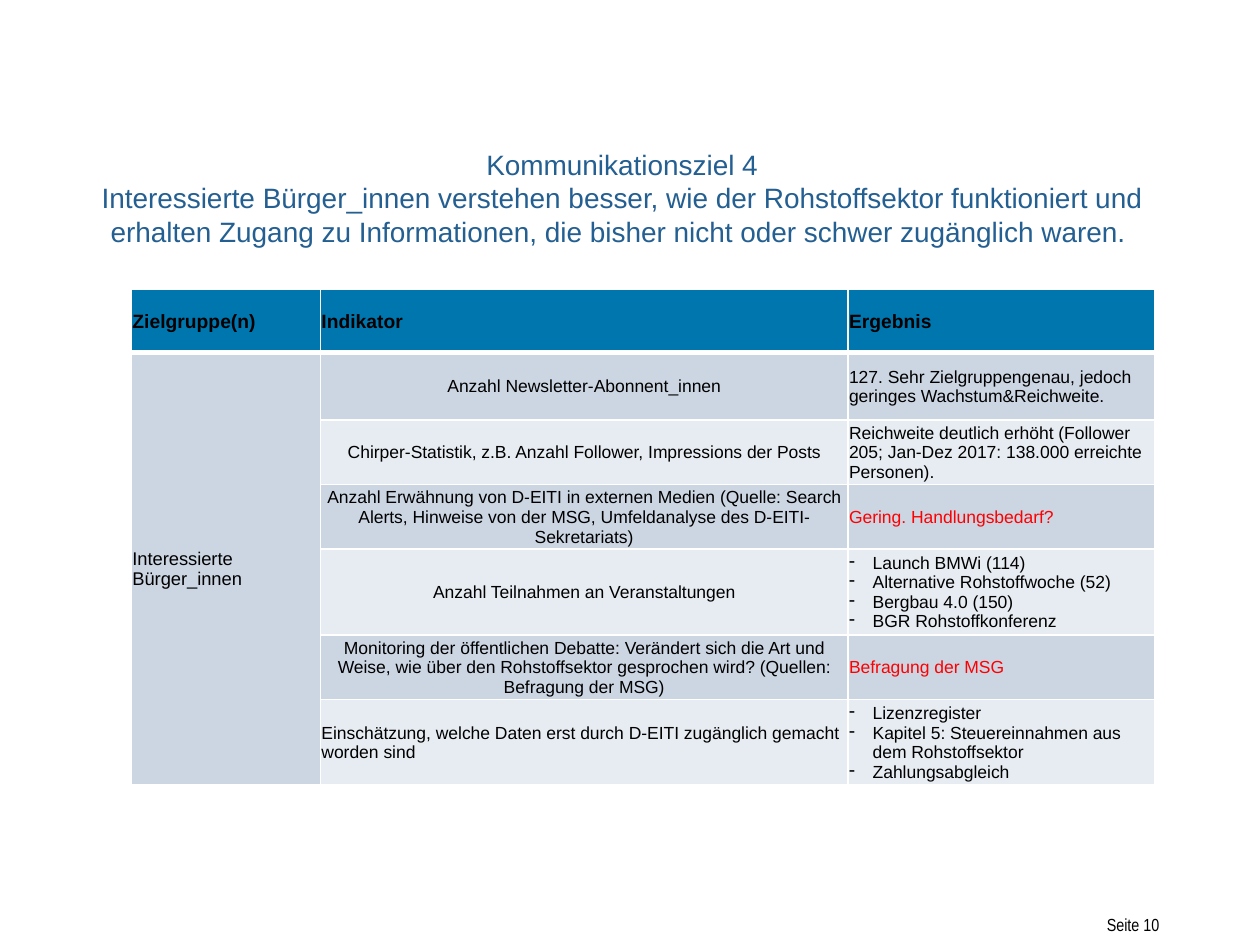
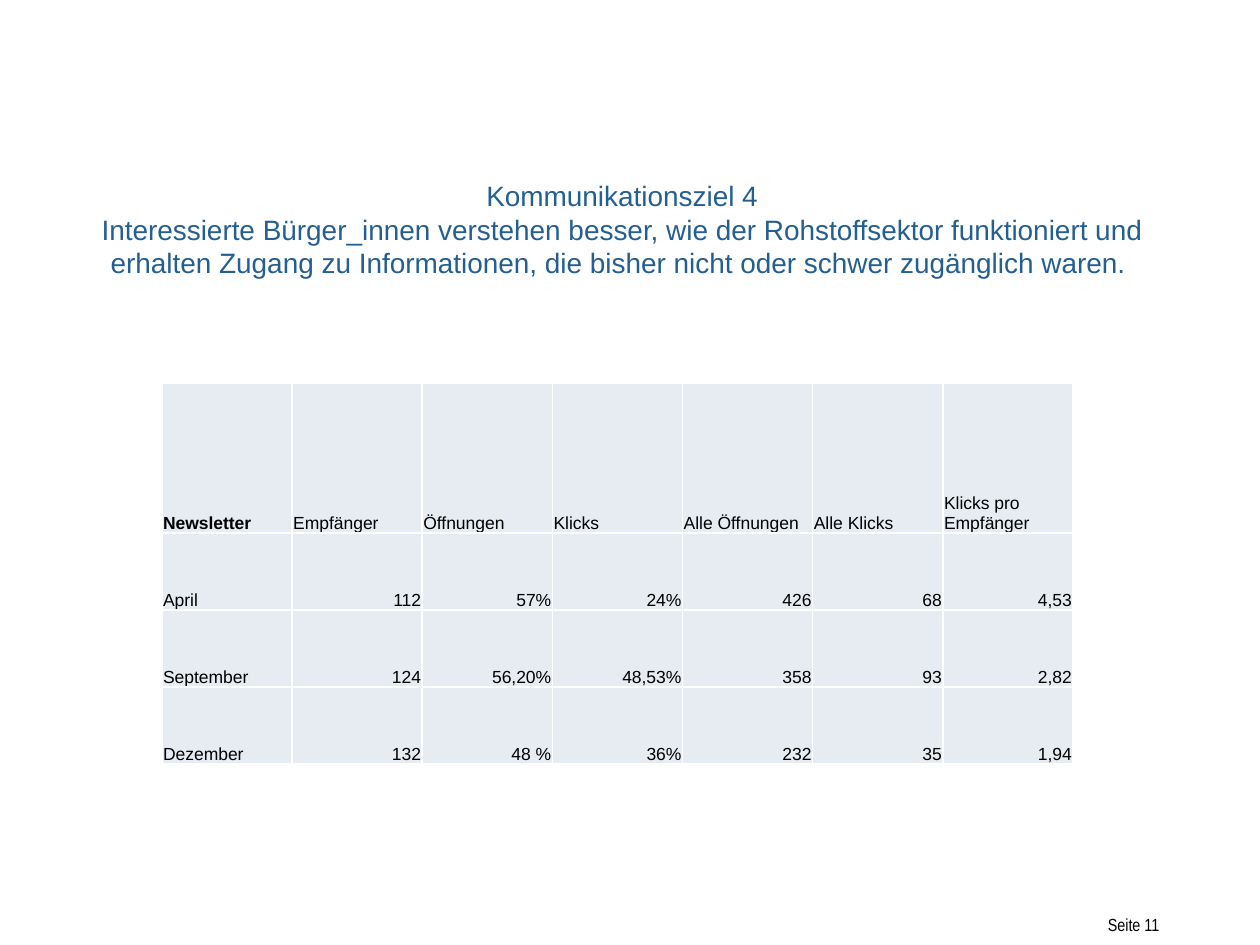
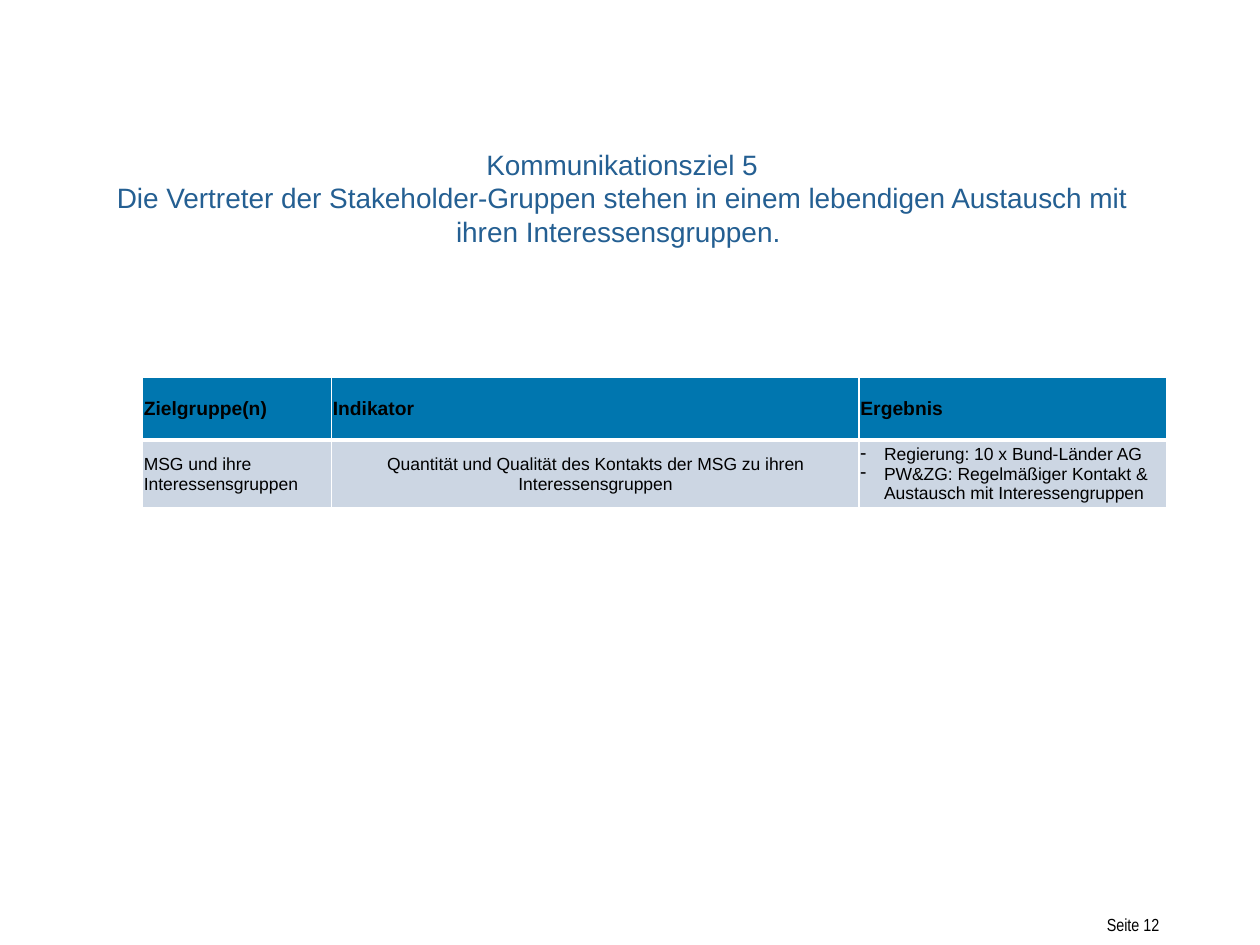
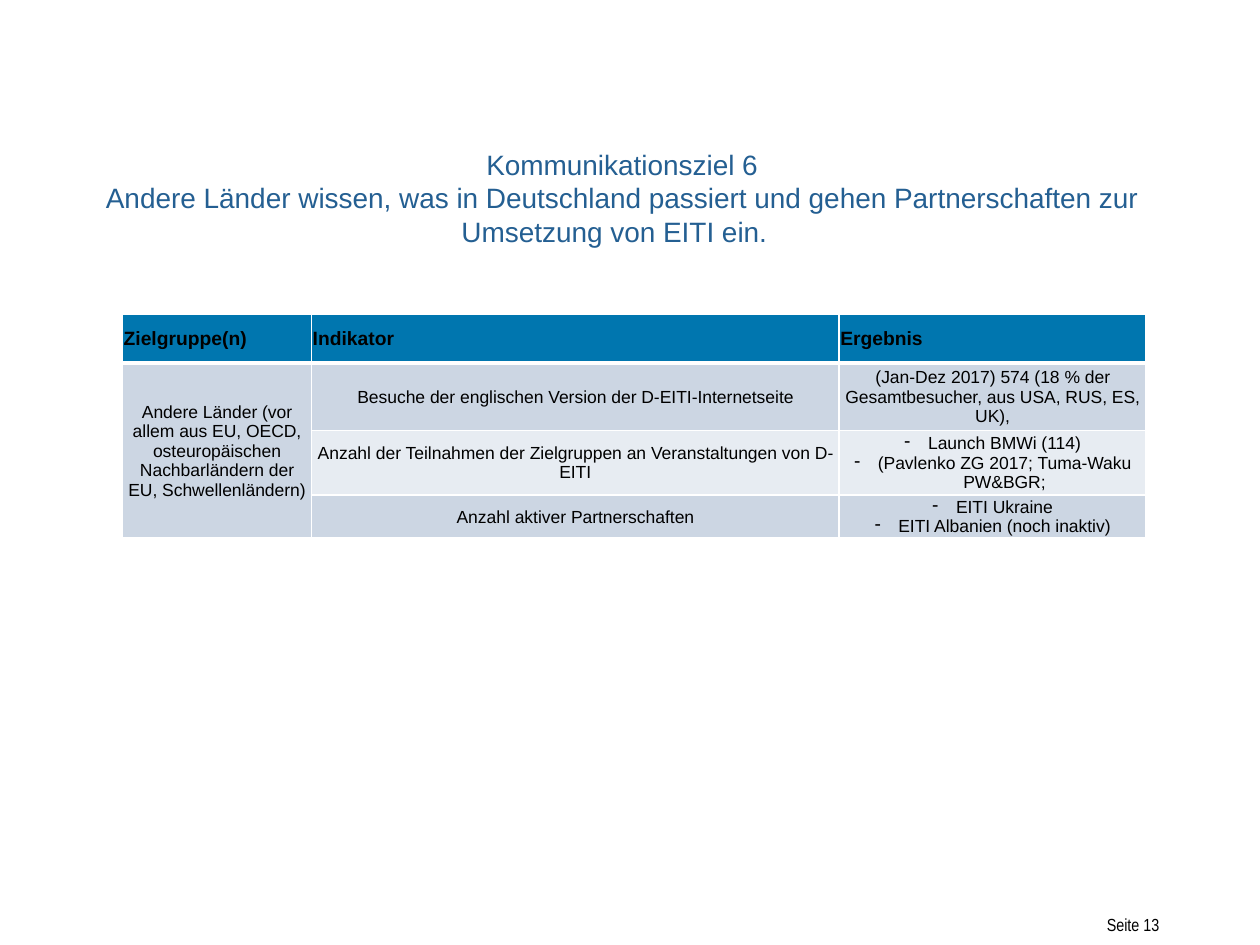
"""Build four slides on communication goals, each with a title, a table and a page number."""
import pptx
import pptx.dml.color
import pptx.enum.shapes
import pptx.enum.text
import pptx.oxml
import pptx.oxml.ns
import pptx.util

Pt = pptx.util.Pt
ALIGN = pptx.enum.text.PP_ALIGN
ANCHOR = pptx.enum.text.MSO_ANCHOR
COLORS = {
    "title": "245F92",
    "text": "000000",
    "alert": "FF0000",
    "header": "0076AF",
    "dark_band": "CCD6E3",
    "light_band": "E7ECF2",
    "white": "FFFFFF",
}
NAMESPACE = pptx.oxml.ns.nsdecls("a")


def write_text(frame, text, size=10, color="text", font="Arial", bold=False,
               align=ALIGN.LEFT, line_spacing=None):
    """Write a string as one paragraph, or a list as dashed paragraphs."""
    frame.word_wrap = True
    bulleted = isinstance(text, list)
    for index, line in enumerate(text if bulleted else [text]):
        paragraph = frame.paragraphs[0] if index == 0 else frame.add_paragraph()
        paragraph.text = line
        paragraph.alignment = align
        paragraph.line_spacing = line_spacing
        if bulleted:
            properties = paragraph._p.get_or_add_pPr()
            properties.set("marL", str(Pt(13.5)))
            properties.set("indent", str(-Pt(13.5)))
            properties.append(pptx.oxml.parse_xml(f'<a:buChar {NAMESPACE} char="-"/>'))
        for run in paragraph.runs:
            run.font.size = Pt(size)
            run.font.name = font
            run.font.bold = bold
            run.font.color.rgb = pptx.dml.color.RGBColor.from_string(COLORS[color])


def style_cell(cell, fill, anchor, bottom_width=1):
    """Give a cell its margins, white borders and fill."""
    cell.margin_left = cell.margin_right = cell.margin_top = Pt(0.7)
    cell.margin_bottom = 0
    cell.vertical_anchor = anchor
    properties = cell._tc.get_or_add_tcPr()
    for side, width in (("L", 1), ("R", 1), ("T", 1), ("B", bottom_width)):
        properties.append(pptx.oxml.parse_xml(
            f'<a:ln{side} {NAMESPACE} w="{Pt(width)}"><a:solidFill>'
            f'<a:srgbClr val="{COLORS["white"]}"/></a:solidFill></a:ln{side}>'))
    cell.fill.solid()
    cell.fill.fore_color.rgb = pptx.dml.color.RGBColor.from_string(COLORS[fill])


GOAL_4 = ("Kommunikationsziel 4\nInteressierte Bürger_innen verstehen besser, wie der "
          "Rohstoffsektor funktioniert und erhalten Zugang zu Informationen, die bisher "
          "nicht oder schwer zugänglich waren. ")
GOAL_HEADER = ["Zielgruppe(n)", "Indikator", "Ergebnis"]
GOAL_COLUMNS = [108, 301.5, 175.5]
LAST_INDICATOR = "Einschätzung, welche Daten erst durch D-EITI zugänglich gemacht worden sind"
ALERTS = ["Gering. Handlungsbedarf?", "Befragung der MSG"]

SLIDES = [
    {
        "title": GOAL_4, "title_top": 80.5, "left": 75, "top": 165.5,
        "columns": GOAL_COLUMNS, "heights": [36, 38.5, 37, 36.5, 49, 37, 48.5],
        "aligns": [ALIGN.LEFT, ALIGN.CENTER, ALIGN.LEFT], "group_size": 10.5,
        "rows": [
            GOAL_HEADER,
            ["Interessierte Bürger_innen", "Anzahl Newsletter-Abonnent_innen",
             "127. Sehr Zielgruppengenau, jedoch geringes Wachstum&Reichweite."],
            ["", "Chirper-Statistik, z.B. Anzahl Follower, Impressions der Posts",
             "Reichweite deutlich erhöht (Follower 205; Jan-Dez 2017: 138.000 erreichte Personen)."],
            ["", "Anzahl Erwähnung von D-EITI in externen Medien (Quelle: Search Alerts, "
             "Hinweise von der MSG, Umfeldanalyse des D-EITI-Sekretariats)", ALERTS[0]],
            ["", "Anzahl Teilnahmen an Veranstaltungen",
             ["Launch BMWi (114)", "Alternative Rohstoffwoche (52)", "Bergbau 4.0 (150)",
              "BGR Rohstoffkonferenz"]],
            ["", "Monitoring der öffentlichen Debatte: Verändert sich die Art und Weise, wie über "
             "den Rohstoffsektor gesprochen wird? (Quellen: Befragung der MSG)", ALERTS[1]],
            ["", LAST_INDICATOR,
             ["Lizenzregister", "Kapitel 5: Steuereinnahmen aus dem Rohstoffsektor",
              "Zahlungsabgleich"]],
        ],
    },
    {
        "title": GOAL_4, "title_top": 98.5, "left": 92.5, "top": 219,
        "columns": [74.4] * 7, "heights": [85.5, 44, 44, 44],
        "aligns": [ALIGN.LEFT] + [ALIGN.RIGHT] * 6, "group_size": 10,
        "rows": [
            ["Newsletter", "Empfänger", "Öffnungen", "Klicks", "Alle Öffnungen", "Alle Klicks",
             "Klicks pro Empfänger"],
            ["April", "112", "57%", "24%", "426", "68", "4,53"],
            ["September", "124", "56,20%", "48,53%", "358", "93", "2,82"],
            ["Dezember", "132", "48 %", "36%", "232", "35", "1,94"],
        ],
    },
    {
        "title": "Kommunikationsziel 5\nDie Vertreter der Stakeholder-Gruppen stehen in einem "
                 "lebendigen Austausch mit ihren Interessensgruppen. ",
        "title_top": 80.5, "left": 81.5, "top": 215.5,
        "columns": GOAL_COLUMNS, "heights": [36, 38.5],
        "aligns": [ALIGN.LEFT, ALIGN.CENTER, ALIGN.LEFT], "group_size": 10,
        "rows": [
            GOAL_HEADER,
            ["MSG und ihre Interessensgruppen",
             "Quantität und Qualität des Kontakts der MSG zu ihren Interessensgruppen",
             ["Regierung: 10 x Bund-Länder AG",
              "PW&ZG: Regelmäßiger Kontakt & Austausch mit Interessengruppen"]],
        ],
    },
    {
        "title": "Kommunikationsziel 6\nAndere Länder wissen, was in Deutschland passiert und "
                 "gehen Partnerschaften zur Umsetzung von EITI ein.  ",
        "title_top": 80.5, "left": 70, "top": 179.5,
        "columns": GOAL_COLUMNS, "heights": [28, 38.5, 34, 23],
        "aligns": [ALIGN.CENTER] * 3, "group_size": 10,
        "rows": [
            GOAL_HEADER,
            ["Andere Länder (vor allem aus EU, OECD, osteuropäischen Nachbarländern der EU, "
             "Schwellenländern)", "Besuche der englischen Version der D-EITI-Internetseite",
             "(Jan-Dez 2017) 574 (18 % der Gesamtbesucher, aus USA, RUS, ES, UK),"],
            ["", "Anzahl der Teilnahmen der Zielgruppen an Veranstaltungen von D-EITI",
             ["Launch BMWi (114)", "(Pavlenko ZG 2017; Tuma-Waku PW&BGR;"]],
            ["", "Anzahl aktiver Partnerschaften", ["EITI Ukraine", "EITI Albanien (noch inaktiv)"]],
        ],
    },
]

presentation = pptx.Presentation()
presentation.slide_width = Pt(720)
presentation.slide_height = Pt(540)

for page, content in enumerate(SLIDES, start=10):
    slide = presentation.slides.add_slide(presentation.slide_layouts[6])

    footer = slide.shapes.add_textbox(Pt(597), Pt(518.5), Pt(72.5), Pt(19.5))
    write_text(footer.text_frame, f"Seite {page}", font="Arial Narrow", align=ALIGN.RIGHT)

    corner = slide.shapes.add_shape(pptx.enum.shapes.MSO_SHAPE.RECTANGLE,
                                    Pt(541.5), Pt(26), Pt(151), Pt(57.5))
    corner.shadow.inherit = False
    corner.fill.solid()
    corner.fill.fore_color.rgb = pptx.dml.color.RGBColor.from_string(COLORS["white"])
    corner.line.color.rgb = pptx.dml.color.RGBColor.from_string(COLORS["white"])
    corner.line.width = Pt(0.75)

    title = slide.shapes.add_textbox(Pt(44.5), Pt(content["title_top"]), Pt(622), Pt(64))
    write_text(title.text_frame, content["title"], size=16, color="title",
               align=ALIGN.CENTER, line_spacing=Pt(19.2))

    rows, columns, heights = content["rows"], content["columns"], content["heights"]
    table = slide.shapes.add_table(len(rows), len(columns), Pt(content["left"]), Pt(content["top"]),
                                   Pt(sum(columns)), Pt(sum(heights))).table
    table.first_row = table.horz_banding = False
    for column, width in zip(table.columns, columns):
        column.width = Pt(width)
    for row, height in zip(table.rows, heights):
        row.height = Pt(height)

    is_goal_table = rows[0] is GOAL_HEADER
    for row_index, row in enumerate(rows):
        for column_index, text in enumerate(row):
            cell = table.cell(row_index, column_index)
            is_header = row_index == 0
            if not is_goal_table:
                style_cell(cell, "light_band", ANCHOR.BOTTOM)
            elif is_header:
                style_cell(cell, "header", ANCHOR.MIDDLE, bottom_width=3)
            else:
                is_dark = row_index % 2 == 1 or column_index == 0
                style_cell(cell, "dark_band" if is_dark else "light_band", ANCHOR.MIDDLE)

            if is_header and is_goal_table:
                write_text(cell.text_frame, text, size=11, bold=True, align=ALIGN.JUSTIFY)
            elif is_header:
                write_text(cell.text_frame, text, bold=column_index == 0)
            elif text:
                align = ALIGN.LEFT if text == LAST_INDICATOR else content["aligns"][column_index]
                write_text(cell.text_frame, text, align=align,
                           size=content["group_size"] if column_index == 0 else 10,
                           color="alert" if text in ALERTS else "text")
    if is_goal_table and len(rows) > 2:
        table.cell(1, 0).merge(table.cell(len(rows) - 1, 0))

presentation.save("out.pptx")
